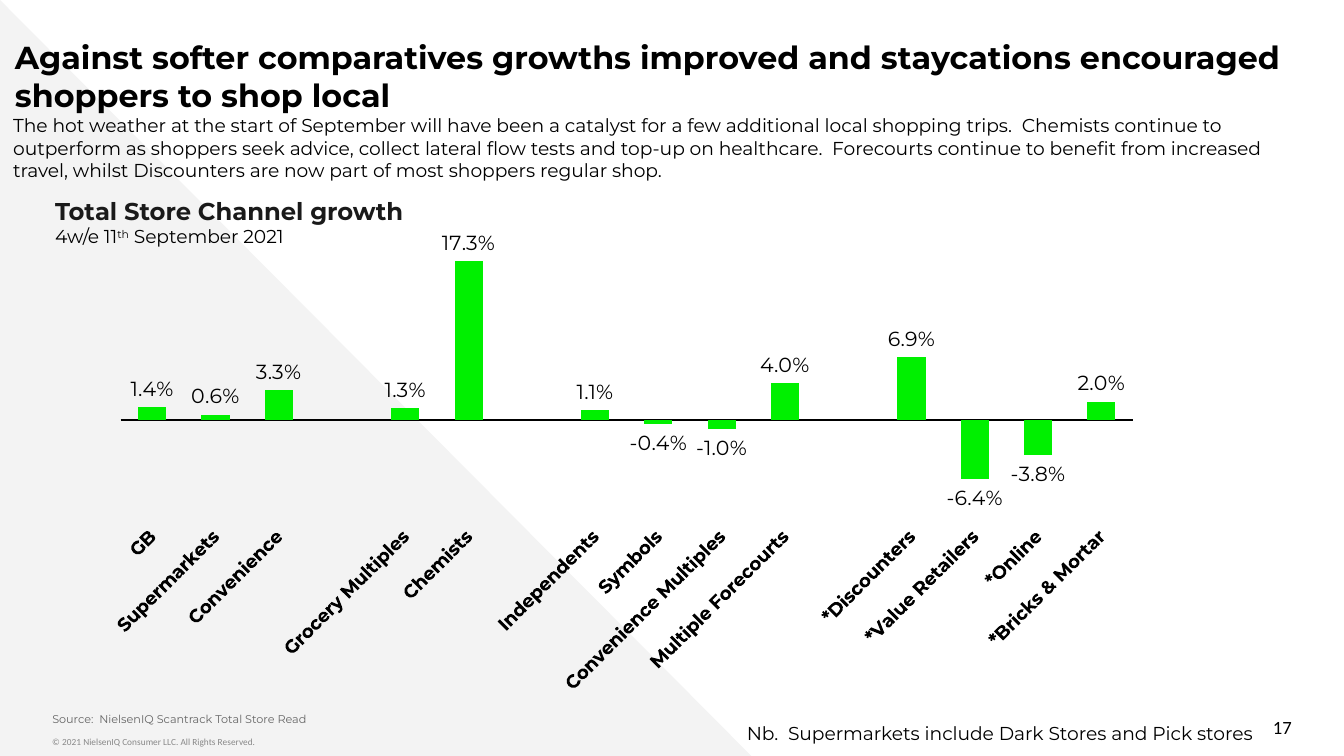
"""Build the store channel growth slide with its column chart."""
from lxml import etree
from pptx import Presentation
from pptx.chart.data import CategoryChartData
from pptx.dml.color import RGBColor
from pptx.enum.chart import XL_CHART_TYPE, XL_LABEL_POSITION, XL_TICK_LABEL_POSITION, XL_TICK_MARK
from pptx.enum.shapes import MSO_SHAPE
from pptx.enum.text import MSO_ANCHOR, MSO_AUTO_SIZE, PP_ALIGN
from pptx.oxml.ns import qn
from pptx.util import Pt

COLUMN = XL_CHART_TYPE.COLUMN_CLUSTERED
OUTSIDE_END = XL_LABEL_POSITION.OUTSIDE_END
LOW = XL_TICK_LABEL_POSITION.LOW
NO_TICK = XL_TICK_MARK.NONE
TRIANGLE = MSO_SHAPE.RIGHT_TRIANGLE
TOP, MIDDLE, BOTTOM = MSO_ANCHOR.TOP, MSO_ANCHOR.MIDDLE, MSO_ANCHOR.BOTTOM
NO_FIT = MSO_AUTO_SIZE.NONE
LEFT, RIGHT = PP_ALIGN.LEFT, PP_ALIGN.RIGHT

COLORS = {
    "black": "000000",
    "heading": "1A1A1A",
    "source": "666666",
    "copyright": "888888",
    "triangle": "F3F3F3",
    "column": "00F000",
}
FORMATS = {
    "title": {"name": "Montserrat", "size": Pt(17), "bold": True},
    "heading": {"name": "Montserrat", "size": Pt(13), "bold": True},
    "body": {"name": "Montserrat", "size": Pt(10), "bold": False},
    "source": {"name": "Montserrat", "size": Pt(6), "bold": False},
    "copyright": {"name": "Calibri", "size": Pt(5), "bold": False},
    "number": {"name": "Calibri", "size": Pt(10), "bold": False},
    "chart": {"name": "Arial", "size": Pt(10)},
    "category": {"name": "Montserrat", "size": Pt(10), "bold": True},
    "value": {"name": "Montserrat", "size": Pt(11), "bold": False},
}
CHANNEL_GROUPS = [
    [("GB", 0.014), ("Supermarkets", 0.006), ("Convenience", 0.033)],
    [("Grocery Multiples", 0.013), ("Chemists", 0.173)],
    [("Independents", 0.011), ("Symbols", -0.004),
     ("Convenience Multiples", -0.01), ("Multiple Forecourts", 0.04)],
    [("*Discounters", 0.069), ("*Value Retailers", -0.064),
     ("*Online", -0.038), ("*Bricks & Mortar", 0.02)],
]
PLOT_LAYOUT = {"layoutTarget": "inner", "xMode": "edge", "yMode": "edge",
               "x": 0.01, "y": 0.01, "w": 0.96, "h": 0.585}
TITLE = ("Against softer comparatives growths improved and staycations "
         "encouraged shoppers to shop local")
COMMENTARY = (
    "The hot weather at the start of September will have been a catalyst for a few "
    "additional local shopping trips.  Chemists continue to outperform as shoppers seek "
    "advice, collect lateral flow tests and top-up on healthcare.  Forecourts continue to "
    "benefit from increased travel, whilst Discounters are now part of most shoppers "
    "regular shop.")


def set_attributes(target, values):
    for name, value in values.items():
        setattr(target, name, value)


def format_font(font, style, color="black"):
    set_attributes(font, FORMATS[style])
    font.color.rgb = RGBColor.from_string(COLORS[color])


def add_run(paragraph, text, style, color="black"):
    run = paragraph.add_run()
    run.text = text
    format_font(run.font, style, color)
    return run


def prepare_text(shape, insets, anchor=TOP, align=LEFT, wrap=True):
    horizontal, vertical = (Pt(inset) for inset in insets)
    frame = shape.text_frame
    set_attributes(frame, {
        "margin_left": horizontal, "margin_right": horizontal,
        "margin_top": vertical, "margin_bottom": vertical,
        "vertical_anchor": anchor, "word_wrap": wrap, "auto_size": NO_FIT})
    paragraph = frame.paragraphs[0]
    set_attributes(paragraph, {"alignment": align, "space_before": Pt(0)})
    return paragraph


def add_text_box(slide, box, insets, **options):
    shape = slide.shapes.add_textbox(*map(Pt, box))
    return prepare_text(shape, insets, **options)


def fill_placeholder(shape, box, text, style, color="black", anchor=TOP):
    set_attributes(shape, dict(zip(("left", "top", "width", "height"), map(Pt, box))))
    add_run(prepare_text(shape, (0, 7.2), anchor), text, style, color)


def add_background_triangle(slide):
    shape = slide.shapes.add_shape(TRIANGLE, 0, 0, Pt(402.5), Pt(405))
    shape.shadow.inherit = False
    shape.fill.solid()
    shape.fill.fore_color.rgb = RGBColor.from_string(COLORS["triangle"])
    shape.line.fill.background()
    shape.element.getparent().insert(2, shape.element)


def add_chart_heading(slide):
    paragraph = add_text_box(slide, (29.5, 101.5, 299.5, 35.3), (0, 3.6))
    paragraph.space_after = Pt(12)
    add_run(paragraph, "Total Store Channel growth", "heading", "heading")
    paragraph.add_line_break()
    add_run(paragraph, "4w/e 11", "body")
    ordinal = add_run(paragraph, "th", "body")
    ordinal._r.get_or_add_rPr().set("baseline", "30000")
    add_run(paragraph, " September 2021", "body")


def set_plot_layout(chart):
    plot_area = chart.element.find(".//" + qn("c:plotArea"))
    for old in plot_area.findall(qn("c:layout")):
        plot_area.remove(old)
    layout = etree.Element(qn("c:layout"))
    manual = etree.SubElement(layout, qn("c:manualLayout"))
    for name, value in PLOT_LAYOUT.items():
        etree.SubElement(manual, qn("c:" + name)).set("val", str(value))
    plot_area.insert(0, layout)


def format_axes(chart):
    category_axis = chart.category_axis
    set_attributes(category_axis, {
        "tick_label_position": LOW, "major_tick_mark": NO_TICK,
        "minor_tick_mark": NO_TICK, "has_major_gridlines": False})
    format_font(category_axis.tick_labels.font, "category")
    category_axis.format.line.width = Pt(0.75)
    category_axis.format.line.color.rgb = RGBColor.from_string(COLORS["black"])
    body = chart.element.find(f".//{qn('c:catAx')}/{qn('c:txPr')}/{qn('a:bodyPr')}")
    body.set("rot", "-2700000")
    body.set("vert", "horz")
    set_attributes(chart.value_axis, {
        "visible": False, "has_major_gridlines": False,
        "minimum_scale": -0.1, "maximum_scale": 0.2})


def add_growth_chart(slide):
    rows = list(CHANNEL_GROUPS[0])
    for group in CHANNEL_GROUPS[1:]:
        rows += [("", None), *group]
    data = CategoryChartData(number_format="0.0%")
    data.categories = [name for name, _ in rows]
    data.add_series("Series 1", [value for _, value in rows])
    box = map(Pt, (59, 123, 565, 253.5))
    chart = slide.shapes.add_chart(COLUMN, *box, data).chart
    set_attributes(chart, {"has_legend": False, "has_title": False})
    format_font(chart.font, "chart")
    plot = chart.plots[0]
    set_attributes(plot, {"gap_width": 125, "vary_by_categories": False})
    series = plot.series[0]
    series.invert_if_negative = False
    series.format.fill.solid()
    series.format.fill.fore_color.rgb = RGBColor.from_string(COLORS["column"])
    labels = series.data_labels
    set_attributes(labels, {
        "show_value": True, "position": OUTSIDE_END,
        "number_format": "0.0%", "number_format_is_linked": False})
    format_font(labels.font, "value")
    format_axes(chart)
    set_plot_layout(chart)


def main():
    presentation = Presentation()
    set_attributes(presentation, {"slide_width": Pt(720), "slide_height": Pt(405)})
    slide = presentation.slides.add_slide(presentation.slide_layouts[0])
    add_background_triangle(slide)
    fill_placeholder(slide.shapes.title, (8, 13, 708.5, 29.5), TITLE, "title")
    fill_placeholder(slide.placeholders[1], (28, 381.6, 642, 14.4),
                     "Source:  NielsenIQ Scantrack Total Store Read",
                     "source", "source", BOTTOM)
    copyright_line = add_text_box(slide, (28, 391, 399, 14.4), (0, 3.6))
    add_run(copyright_line, "© 2021 NielsenIQ Consumer LLC. All Rights Reserved.",
            "copyright", "copyright")
    number = add_text_box(slide, (530, 378.7, 162, 21.6), (0, 3.6), anchor=MIDDLE, align=RIGHT)
    add_run(number, "17", "number")
    add_chart_heading(slide)
    add_growth_chart(slide)
    note = add_text_box(slide, (386, 383, 292, 19.4), (7.2, 3.6), align=RIGHT, wrap=False)
    add_run(note, "Nb.  Supermarkets include Dark Stores and Pick stores", "body")
    commentary = add_text_box(slide, (0, 57.6, 708.5, 44), (7.2, 3.6))
    add_run(commentary, COMMENTARY, "body")
    presentation.save("out.pptx")


if __name__ == "__main__":
    main()
